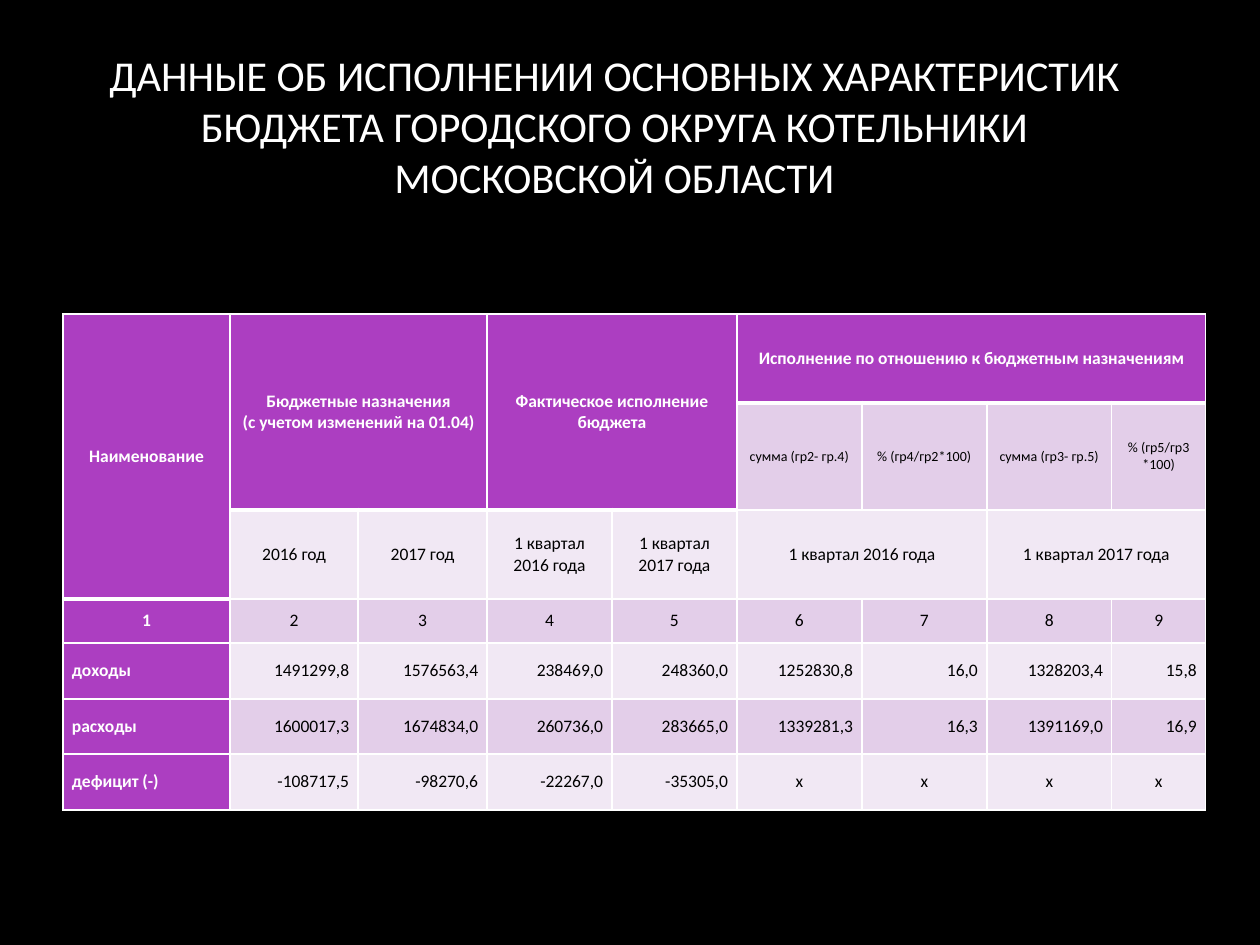
from lxml.etree import SubElement
from pptx import Presentation
from pptx.dml.color import RGBColor
from pptx.enum.text import MSO_ANCHOR, PP_ALIGN
from pptx.oxml.ns import qn
from pptx.util import Emu, Pt

FONT = "Calibri"
WHITE, BLACK = "FFFFFF", "000000"
HEAD, DARK, LIGHT = "AC3EC1", "E3CEE9", "F1E8F4"

TITLE = ("ДАННЫЕ ОБ ИСПОЛНЕНИИ ОСНОВНЫХ ХАРАКТЕРИСТИК БЮДЖЕТА "
         "ГОРОДСКОГО ОКРУГА КОТЕЛЬНИКИ МОСКОВСКОЙ ОБЛАСТИ")

COLS = [167, 128, 129, 125, 125, 125, 125, 125, 94]
ROWS = [89, 107, 89, 44, 56, 55, 56]
DATA = [
    ["Наименование", "Бюджетные назначения\n(с учетом изменений на 01.04)", "",
     "Фактическое исполнение бюджета", "",
     "Исполнение по отношению к бюджетным назначениям", "", "", ""],
    ["", "", "", "", "", "сумма (гр2- гр.4)", "% (гр4/гр2*100)",
     "сумма (гр3- гр.5)", "% (гр5/гр3 *100)"],
    ["", "2016 год", "2017 год", "1 квартал 2016 года", "1 квартал 2017 года",
     "1 квартал 2016 года", "", "1 квартал 2017 года", ""],
    [str(n) for n in range(1, 10)],
    ["доходы", "1491299,8", "1576563,4", "238469,0", "248360,0",
     "1252830,8", "16,0", "1328203,4", "15,8"],
    ["расходы", "1600017,3", "1674834,0", "260736,0", "283665,0",
     "1339281,3", "16,3", "1391169,0", "16,9"],
    ["дефицит (-)", "-108717,5", "-98270,6", "-22267,0", "-35305,0",
     "х", "х", "х", "х"],
]
# Merged areas: first row, first column, last row, last column
SPANS = [(0, 0, 2, 0), (0, 1, 1, 2), (0, 3, 1, 4), (0, 5, 0, 8),
         (2, 5, 2, 6), (2, 7, 2, 8)]
# Cells above the thick rule that closes the header
EDGE = ({(2, 0)} | {(1, col) for col in range(1, 5)}
        | {(0, col) for col in range(5, 9)})


def px(n):
    return Emu(round(n * 914400 / 126))


def rgb(code):
    return RGBColor.from_string(code)


def style(frame, size, color, align, bold=False):
    for para in frame.paragraphs:
        para.alignment = align
        for run in para.runs:
            run.font.name = FONT
            run.font.size = Pt(size)
            run.font.bold = bold
            run.font.color.rgb = rgb(color)


def add_title(slide):
    box = slide.shapes.add_textbox(px(63), px(45), px(1103), px(208))
    frame = box.text_frame
    frame.word_wrap = True
    frame.vertical_anchor = MSO_ANCHOR.MIDDLE
    frame.margin_bottom = px(54)
    frame.text = TITLE
    style(frame, 24.3, WHITE, PP_ALIGN.CENTER)


def add_lines(cell, row, col):
    top = 3 if (row - 1, col) in EDGE else 1
    base = 3 if (row, col) in EDGE else 1
    props = cell._tc.get_or_add_tcPr()
    for side, width in (("L", 1), ("R", 1), ("T", top), ("B", base)):
        line = SubElement(props, qn(f"a:ln{side}"), w=str(Pt(width)))
        fill = SubElement(line, qn("a:solidFill"))
        SubElement(fill, qn("a:srgbClr"), val=WHITE)


def pick_align(row, col, text):
    if row < 4 or text == "х":
        return PP_ALIGN.CENTER
    return PP_ALIGN.RIGHT if col else PP_ALIGN.LEFT


def fill_cell(cell, row, col, text):
    head = row == 0 or col == 0
    cell.vertical_anchor = MSO_ANCHOR.MIDDLE
    cell.margin_left = cell.margin_right = px(9)
    cell.margin_top = cell.margin_bottom = 0
    add_lines(cell, row, col)
    cell.fill.solid()
    cell.fill.fore_color.rgb = rgb(HEAD if head else DARK if row % 2 else LIGHT)
    if text:
        cell.text_frame.text = text
        style(cell.text_frame, 8 if row == 1 else 10,
              WHITE if head else BLACK, pick_align(row, col, text), head)


def add_grid(slide):
    frame = slide.shapes.add_table(len(ROWS), len(COLS), px(63), px(314),
                                   px(sum(COLS)), px(sum(ROWS)))
    table = frame.table
    table.first_row = table.horz_banding = False
    for col, width in enumerate(COLS):
        table.columns[col].width = px(width)
    for row, height in enumerate(ROWS):
        table.rows[row].height = px(height)
        for col, text in enumerate(DATA[row]):
            fill_cell(table.cell(row, col), row, col, text)
    for top, left, base, right in SPANS:
        table.cell(top, left).merge(table.cell(base, right))


def main():
    deck = Presentation()
    deck.slide_width, deck.slide_height = px(1260), px(945)
    slide = deck.slides.add_slide(deck.slide_layouts[6])
    # Black background
    slide.background.fill.solid()
    slide.background.fill.fore_color.rgb = rgb(BLACK)
    # Budget table and heading
    add_grid(slide)
    add_title(slide)
    deck.save("out.pptx")


if __name__ == "__main__":
    main()
